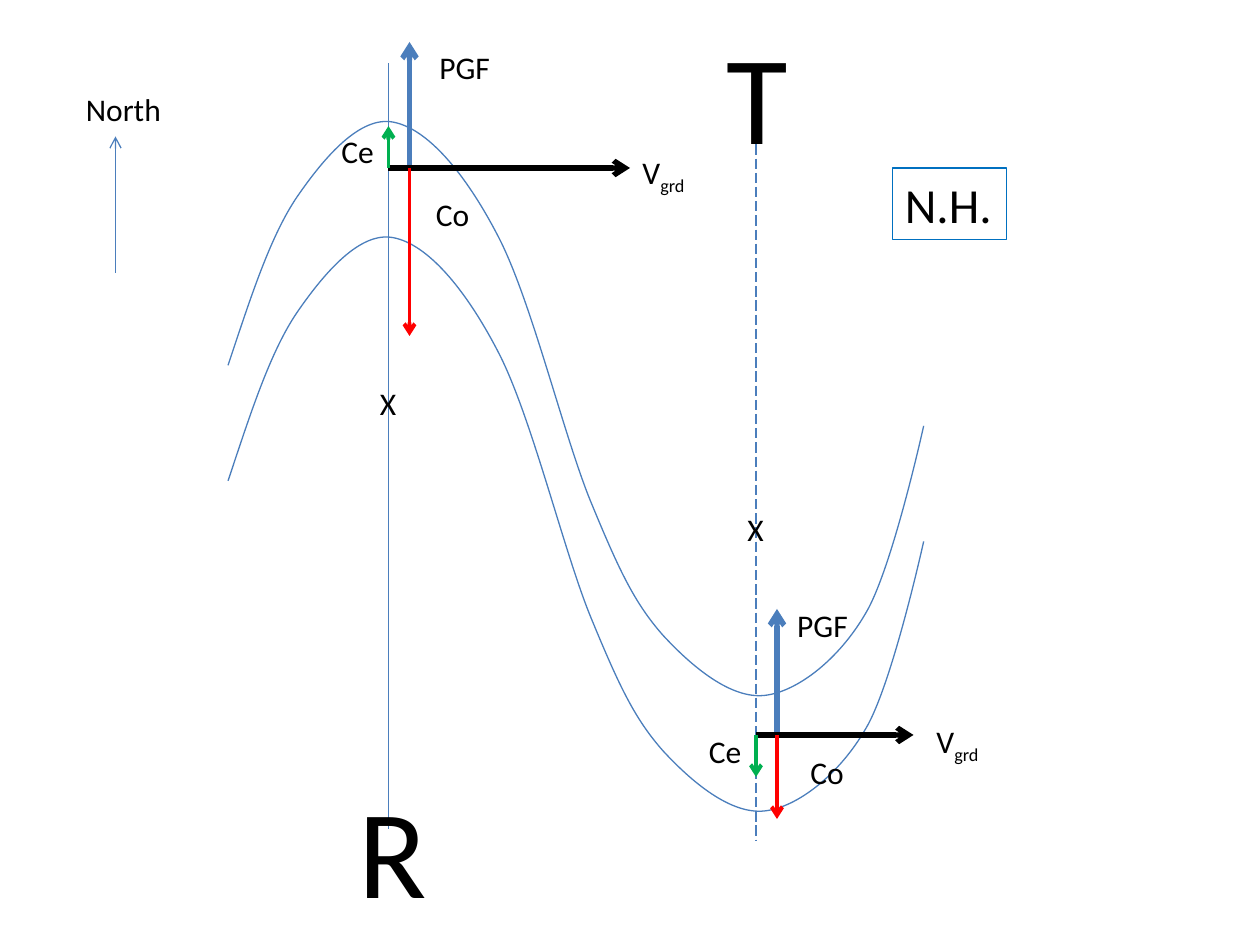
from dataclasses import dataclass

from lxml.etree import SubElement
from pptx import Presentation
from pptx.dml.color import RGBColor
from pptx.enum.dml import MSO_LINE_DASH_STYLE as Dash
from pptx.enum.shapes import MSO_CONNECTOR as Connector, MSO_SHAPE as Shape
from pptx.enum.text import MSO_ANCHOR as Anchor, MSO_AUTO_SIZE as AutoSize, PP_ALIGN as Align
from pptx.oxml.ns import qn
from pptx.util import Pt

COLORS = {"wave": "4B7EBC", "wind": "000000", "coriolis": "FF0000",
          "centrifugal": "00B050", "frame": "0070C0", "text": "000000"}
FONT = "Calibri"
RIDGE_X, TROUGH_X = 222, 432      # axes of the ridge and the trough
RIDGE_Y, TROUGH_Y = 96, 420       # where the forces act
OFFSET = 12                       # pressure and Coriolis arrows beside the axis
CONTOUR_GAP = 66

# Start point, then three points (two controls, one end) per Bezier segment
CONTOUR = [
    (130.3, 208.8),
    (142.6, 172.1), (154.1, 135.4), (169.9, 112.3),
    (185.8, 89.3), (205.9, 66.2), (224.6, 69.8),
    (244.1, 73.4), (265.7, 98.6), (284.4, 134.6),
    (303.8, 171.4), (322.6, 251.3), (338.4, 288.7),
    (354.2, 326.9), (362.9, 344.9), (378.7, 362.9),
    (395.3, 380.9), (417.6, 399.6), (437, 397.4),
    (455.8, 395.3), (479.5, 376.6), (494.6, 350.6),
    (509.8, 325.4), (527.8, 243.4), (527.8, 243.4),
]


@dataclass
class Line:
    start: tuple[float, float]
    end: tuple[float, float]
    color: str = "wave"
    width: float = 0.75
    arrow: bool = True
    dashed: bool = False


@dataclass
class Label:
    text: str
    left: float
    top: float
    width: float
    height: float = 29
    size: float = 18
    subscript: str = ""
    framed: bool = False


def force_lines(x: float, y: float, pressure: float, coriolis: float,
                wind: float, centrifugal: float) -> list[Line]:
    """Arrows that act at one axis; positive lengths run right or down."""
    side = x + OFFSET
    return [
        Line((side, y), (side, y + pressure), "wave", 3),
        Line((x, y), (x + wind, y), "wind", 3),
        Line((side, y), (side, y + coriolis), "coriolis", 2.25),
        Line((x, y), (x, y + centrifugal), "centrifugal", 2.25),
    ]


LINES = [
    Line((RIDGE_X, 36), (RIDGE_X, 474), arrow=False),
    Line((TROUGH_X, 42), (TROUGH_X, 480), arrow=False, dashed=True),
    Line((66, 156), (66, 78)),
    *force_lines(RIDGE_X, RIDGE_Y, -72, 96, 138, -24),
    *force_lines(TROUGH_X, TROUGH_Y, -72, 48, 90, 24),
]

LABELS = [
    Label("X", 210, 216, 24), Label("X", 420, 288, 24),
    Label("PGF", 244, 24, 44), Label("PGF", 448.5, 343, 44),
    Label("V", 360, 84, 40, subscript="grd"),
    Label("V", 528, 409, 40, subscript="grd"),
    Label("Co", 242, 108, 34), Label("Co", 456, 427, 34),
    Label("Ce", 188, 72, 34), Label("Ce", 398, 415, 34),
    Label("North", 42, 48, 57.6),
    Label("N.H.", 510, 96, 65, 41, 28, framed=True),
    Label("R", 198, 438, 54, 94.5, 72), Label("T", 408, 7, 50, 94.5, 72),
]


def rgb(name: str) -> RGBColor:
    return RGBColor.from_string(COLORS[name])


def draw_contour(page, drop: float) -> None:
    points = [(Pt(x), Pt(y + drop)) for x, y in CONTOUR]
    builder = page.shapes.build_freeform(*points[0], scale=1.0)
    builder.add_line_segments(points[1:], close=False)
    curve = builder.convert_to_shape()
    curve.shadow.inherit = False
    curve.fill.background()
    curve.line.color.rgb = rgb("wave")
    curve.line.width = Pt(0.75)
    # Turn each three straight segments into one Bezier segment
    outline = curve._element.find(".//" + qn("a:path"))
    segments = outline.findall(qn("a:lnTo"))
    for first in range(0, len(segments), 3):
        bezier = SubElement(outline, qn("a:cubicBezTo"))
        for segment in segments[first:first + 3]:
            bezier.append(segment[0])
            outline.remove(segment)


def draw_line(page, item: Line) -> None:
    ends = [Pt(value) for value in (*item.start, *item.end)]
    connector = page.shapes.add_connector(Connector.STRAIGHT, *ends)
    connector.line.color.rgb = rgb(item.color)
    connector.line.width = Pt(item.width)
    if item.dashed:
        connector.line.dash_style = Dash.LONG_DASH
    if item.arrow:
        SubElement(connector.line._get_or_add_ln(), qn("a:tailEnd"), type="arrow")
    SubElement(connector._element.spPr, qn("a:effectLst"))


def draw_label(page, item: Label) -> None:
    place = [Pt(value) for value in (item.left, item.top, item.width, item.height)]
    if item.framed:
        box = page.shapes.add_shape(Shape.RECTANGLE, *place)
        box.shadow.inherit = False
        box.fill.background()
        box.line.color.rgb = rgb("frame")
        box.line.width = Pt(0.75)
    else:
        box = page.shapes.add_textbox(*place)
    frame = box.text_frame
    frame.word_wrap = False
    frame.auto_size = AutoSize.SHAPE_TO_FIT_TEXT
    frame.vertical_anchor = Anchor.TOP
    para = frame.paragraphs[0]
    para.alignment = Align.LEFT
    for text, baseline in ((item.text, None), (item.subscript, "-25000")):
        if not text:
            continue
        span = para.add_run()
        span.text = text
        span.font.name = FONT
        span.font.size = Pt(item.size)
        span.font.color.rgb = rgb("text")
        if baseline:
            span.font._element.set("baseline", baseline)


def main() -> None:
    deck = Presentation()
    deck.slide_width, deck.slide_height = Pt(720), Pt(540)
    page = deck.slides.add_slide(deck.slide_layouts[6])

    # Height contours
    for drop in (0, CONTOUR_GAP):
        draw_contour(page, drop)
    # Axes, north arrow and forces
    for item in LINES:
        draw_line(page, item)
    # Names of the forces and systems
    for item in LABELS:
        draw_label(page, item)

    deck.save("out.pptx")


if __name__ == "__main__":
    main()
